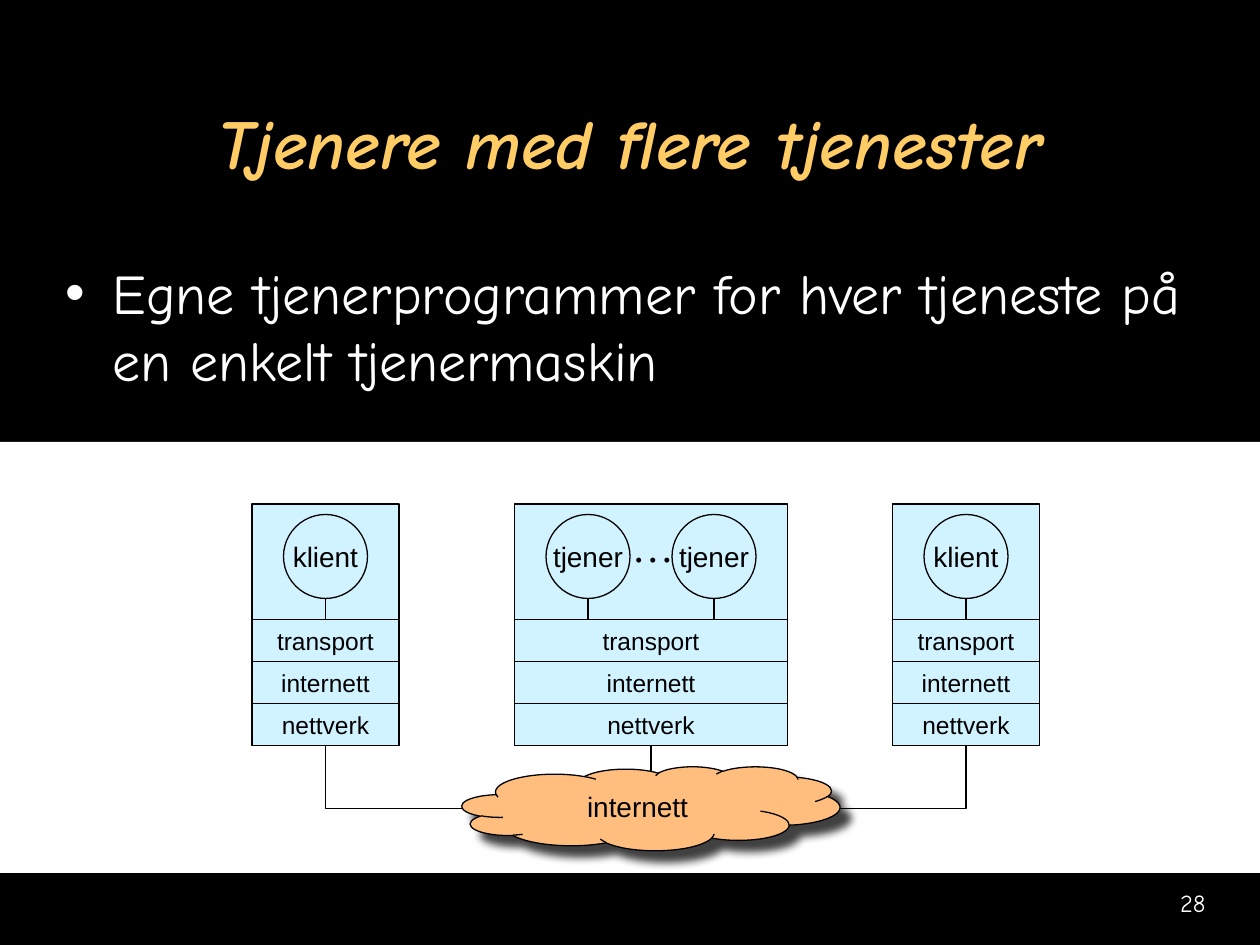
from lxml import etree
from pptx import Presentation, util as u
from pptx.dml.color import RGBColor
from pptx.enum import shapes, text
from pptx.oxml.ns import qn

UNIT = u.Cm(2.54) // 12
BLUE, ORANGE, BLACK, WHITE = "D1F3FF", "FFBE7D", "000000", "FFFFFF"
RECTANGLE, OVAL, CLOUD = (shapes.MSO_SHAPE.RECTANGLE, shapes.MSO_SHAPE.OVAL,
                          shapes.MSO_SHAPE.CLOUD)
STRAIGHT, ELBOW = shapes.MSO_CONNECTOR.STRAIGHT, shapes.MSO_CONNECTOR.ELBOW


def style_text(frame, words, size, font, colour, align):
    frame.text = words
    para = frame.paragraphs[0]
    para.alignment = align
    span = para.runs[0]
    span.font.size = u.Pt(size)
    span.font.name = font
    span.font.color.rgb = RGBColor.from_string(colour)
    return span


def add_block(parent, kind, area, words="", size=14, fill=BLUE):
    box = parent.add_shape(kind, *[value * UNIT for value in area])
    box.shadow.inherit = False
    box.fill.solid()
    box.fill.fore_color.rgb = RGBColor.from_string(fill)
    box.line.color.rgb = RGBColor.from_string(BLACK)
    box.line.width = u.Pt(0.75)
    if words:
        style_text(box.text_frame, words, size, "Arial", BLACK, text.PP_ALIGN.CENTER)
        box.text_frame.word_wrap = False
        box.text_frame.vertical_anchor = text.MSO_ANCHOR.MIDDLE
    return box


deck = Presentation()
deck.slide_width, deck.slide_height = u.Cm(25.4), u.Cm(19.05)
page = deck.slides.add_slide(deck.slide_layouts[1])
page.background.fill.solid()
page.background.fill.fore_color.rgb = RGBColor.from_string(BLACK)

title, body = page.placeholders
title.left, title.top, title.width, title.height = [n * UNIT for n in (5, 6, 110, 15)]
body.left, body.top, body.width, body.height = [n * UNIT for n in (5, 24, 110, 16)]
heading = style_text(title.text_frame, "Tjenere med flere tjenester", 40,
                     "Comic Neue", "FFCC66", text.PP_ALIGN.CENTER)
heading.font.bold = heading.font.italic = True
style_text(body.text_frame,
           "Egne tjenerprogrammer for hver tjeneste på en enkelt tjenermaskin",
           32, "Comic Neue", WHITE, text.PP_ALIGN.LEFT)
for holder in (title, body):
    holder.text_frame.auto_size = text.MSO_AUTO_SIZE.NONE
title.text_frame.vertical_anchor = text.MSO_ANCHOR.MIDDLE

number = page.shapes.add_textbox(91 * UNIT, 84 * UNIT, 25 * UNIT, 4 * UNIT)
number.text_frame.word_wrap = True
style_text(number.text_frame, "28", 14, "Comic Neue", WHITE, text.PP_ALIGN.RIGHT)

panel = add_block(page.shapes, RECTANGLE, (0, 42, 120, 41), fill=WHITE)
panel.top, panel.height = u.Cm(8.91), u.Cm(8.69)
panel.line.fill.background()

connectors = []
for left, width, program, offsets in [(24, 14, "klient", [3]),
                                      (85, 14, "klient", [3]),
                                      (49, 26, "tjener", [3, 15])]:
    host = page.shapes.add_group_shape()
    add_block(host.shapes, RECTANGLE, (left, 48, width, 23))
    for row, layer in enumerate(["transport", "internett", "nettverk"]):
        add_block(host.shapes, RECTANGLE, (left, 59 + 4 * row, width, 4), layer)
    for offset in offsets:
        add_block(host.shapes, OVAL, (left + offset, 49, 8, 8), program, 16)
        centre = left + offset + 4
        stem = host.shapes.add_connector(STRAIGHT, centre * UNIT, 57 * UNIT,
                                         centre * UNIT, 59 * UNIT)
        connectors.append(stem)

dots = host.shapes.add_textbox(59 * UNIT, 49 * UNIT, u.Cm(1.35), 6 * UNIT)
dots.text_frame.word_wrap = False
style_text(dots.text_frame, "…", 24, "Times New Roman", BLACK, text.PP_ALIGN.CENTER)

cloud = add_block(page.shapes, CLOUD, (44, 73, 36, 8), "internett", 16, ORANGE)
cloud.text_frame.word_wrap = True
effects = cloud._element.spPr.find(qn("a:effectLst"))
shadow = etree.SubElement(effects, qn("a:outerShdw"), blurRad=str(u.Pt(5)),
                          dist=str(u.Pt(8.5)), dir="2700000", algn="ctr", rotWithShape="0")
tint = etree.SubElement(shadow, qn("a:srgbClr"), val=BLACK)
etree.SubElement(tint, qn("a:alpha"), val="75000")

for kind, ends in [(ELBOW, (44.1, 77, 31, 71)), (ELBOW, (80, 77, 92, 71)),
                   (STRAIGHT, (62, 71, 62, 73.4))]:
    link = page.shapes.add_connector(kind, *[round(value * UNIT) for value in ends])
    if kind == ELBOW:
        link._element.spPr.find(qn("a:prstGeom")).set("prst", "bentConnector2")
    connectors.append(link)

for link in connectors:
    link.line.color.rgb = RGBColor.from_string(BLACK)
    link.line.width = u.Pt(0.75)
    etree.SubElement(link._element.spPr, qn("a:effectLst"))

deck.save("out.pptx")
